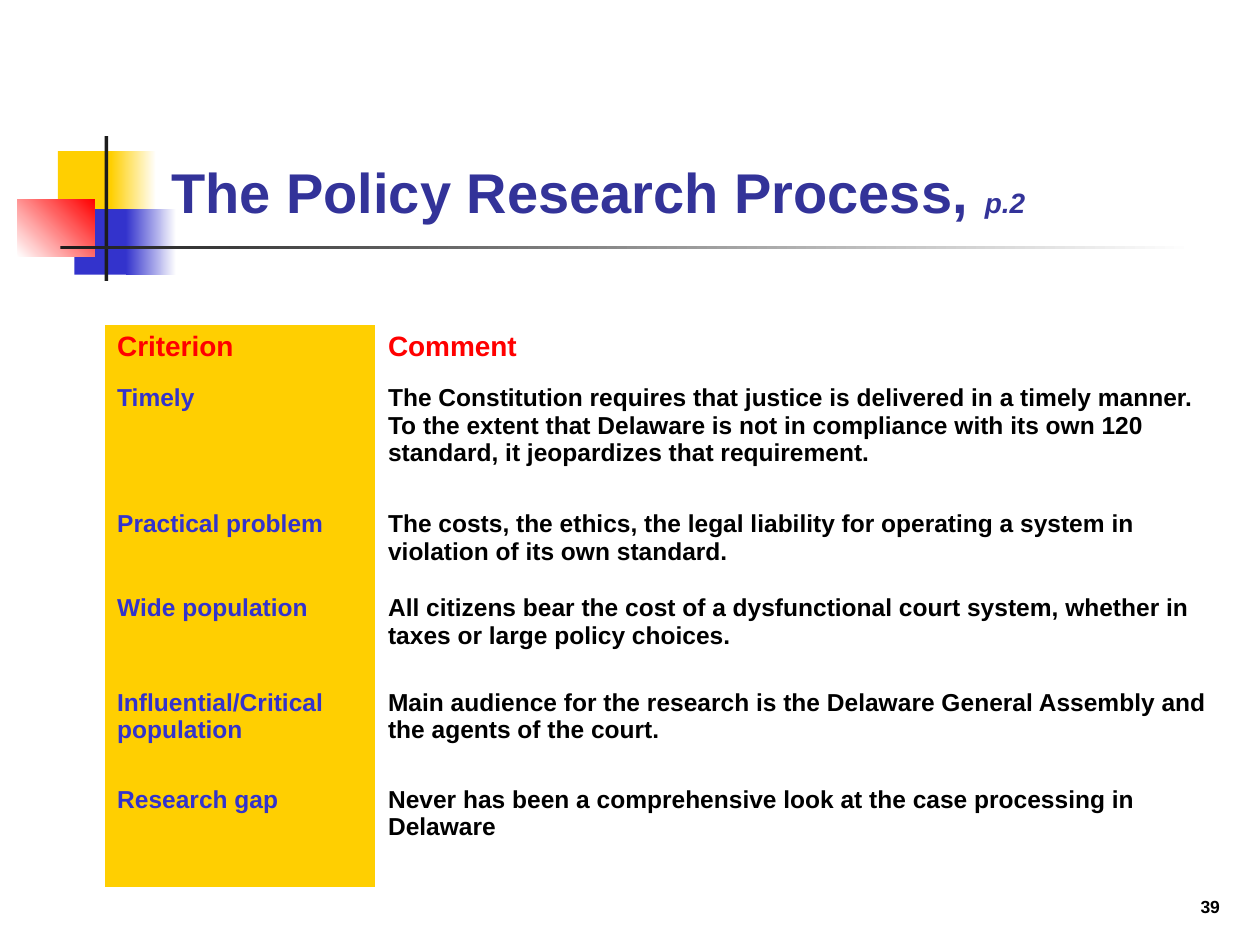
from dataclasses import dataclass
from typing import NamedTuple, Optional

from pptx import Presentation
from pptx.dml.color import RGBColor
from pptx.enum.shapes import MSO_SHAPE
from pptx.enum.text import MSO_ANCHOR, MSO_AUTO_SIZE, PP_ALIGN
from pptx.oxml.ns import qn
from pptx.util import Inches, Pt


@dataclass(frozen=True)
class Theme:
    font: str = "Arial"
    yellow: str = "FFCF01"
    blue: str = "3333CC"
    red: str = "FF0000"
    white: str = "FFFFFF"
    dark: str = "1C1C1C"
    black: str = "000000"
    title: str = "333399"
    title_size: int = 32
    header_size: int = 16
    body_size: int = 14
    number_size: int = 10


class Block(NamedTuple):
    left: float
    top: float
    width: float
    height: float
    color: str
    fade_to: Optional[str] = None
    angle: int = 0


class Row(NamedTuple):
    height: float
    criterion: str
    comment: str


THEME = Theme()
NO_GRID_STYLE = "{2D5ABB26-0587-4C30-8999-92F81FD0307C}"

BLOCKS = [
    Block(0.46, 1.2, 0.48, 0.52, THEME.yellow),
    Block(0.88, 1.2, 0.36, 0.52, THEME.yellow, THEME.white),
    Block(0.59, 1.66, 0.46, 0.52, THEME.blue),
    Block(1, 1.66, 0.4, 0.52, THEME.blue, THEME.white),
    Block(0.14, 1.58, 0.61, 0.46, THEME.white, THEME.red, 45),
    Block(0.83, 1.08, 0.03, 1.15, THEME.dark),
    Block(0.48, 1.95, 9, 0.03, THEME.dark, THEME.white),
]

COLUMN_WIDTHS = [2.15, 6.77]
ROWS = [
    Row(0.42, "Criterion", "Comment"),
    Row(1, "Timely",
        "The Constitution requires that justice is delivered in a timely manner.  "
        "To the extent that Delaware is not in compliance with its own 120 standard, "
        "it jeopardizes that requirement."),
    Row(0.67, "Practical problem",
        "The costs, the ethics, the legal liability for operating a system in "
        "violation of its own standard."),
    Row(0.75, "Wide population",
        "All citizens bear the cost of a dysfunctional court system, whether in "
        "taxes or large policy choices."),
    Row(0.77, "Influential/Critical population",
        "Main audience for the research is the Delaware General Assembly and "
        "the agents of the court."),
    Row(0.85, "Research gap",
        "Never has been a comprehensive look at the case processing in Delaware"),
]


def add_span(para, text: str, size: int, color: str, italic: bool = False) -> None:
    span = para.add_run()
    span.text = text
    span.font.name = THEME.font
    span.font.size = Pt(size)
    span.font.bold = True
    span.font.italic = italic
    span.font.color.rgb = RGBColor.from_string(color)


def draw_block(page, block: Block) -> None:
    shape = page.shapes.add_shape(
        MSO_SHAPE.RECTANGLE, Inches(block.left), Inches(block.top),
        Inches(block.width), Inches(block.height))
    shape.shadow.inherit = False
    shape.line.fill.background()
    if block.fade_to is None:
        shape.fill.solid()
        shape.fill.fore_color.rgb = RGBColor.from_string(block.color)
        return
    shape.fill.gradient()
    shape.fill.gradient_angle = block.angle
    for stop, color in zip(shape.fill.gradient_stops, (block.color, block.fade_to)):
        stop.color.rgb = RGBColor.from_string(color)


def draw_title(page) -> None:
    box = page.shapes.title
    box.left, box.top, box.width, box.height = map(Inches, (1.26, 0.23, 8.52, 1.6))
    box.text_frame.auto_size = MSO_AUTO_SIZE.NONE
    box.text_frame.vertical_anchor = MSO_ANCHOR.BOTTOM
    para = box.text_frame.paragraphs[0]
    para.alignment = PP_ALIGN.LEFT
    add_span(para, "The Policy Research Process, ", THEME.title_size, THEME.title)
    add_span(para, "p.2", THEME.header_size, THEME.title, italic=True)


def draw_page_number(page) -> None:
    box = page.shapes.add_textbox(Inches(7.7), Inches(6.83), Inches(2.08), Inches(0.5))
    box.text_frame.word_wrap = True
    box.text_frame.vertical_anchor = MSO_ANCHOR.BOTTOM
    para = box.text_frame.paragraphs[0]
    para.alignment = PP_ALIGN.RIGHT
    add_span(para, "39", THEME.number_size, THEME.black)


def draw_table(page) -> None:
    frame = page.shapes.add_table(
        len(ROWS), len(COLUMN_WIDTHS), Inches(0.83), Inches(2.58),
        Inches(sum(COLUMN_WIDTHS)), Inches(sum(row.height for row in ROWS)))
    table = frame.table
    table.first_row = table.horz_banding = False
    next(frame.element.iter(qn("a:tableStyleId"))).text = NO_GRID_STYLE
    for column, width in zip(table.columns, COLUMN_WIDTHS):
        column.width = Inches(width)

    for index, row in enumerate(ROWS):
        table.rows[index].height = Inches(row.height)
        is_header = index == 0
        size = THEME.header_size if is_header else THEME.body_size
        colors = (THEME.red, THEME.red) if is_header else (THEME.blue, THEME.black)
        for cell, text, color in zip(
                table.rows[index].cells, (row.criterion, row.comment), colors):
            add_span(cell.text_frame.paragraphs[0], text, size, color)
        criterion, comment = table.rows[index].cells
        criterion.fill.solid()
        criterion.fill.fore_color.rgb = RGBColor.from_string(THEME.yellow)
        comment.fill.background()


def main() -> None:
    deck = Presentation()
    deck.slide_width, deck.slide_height = Inches(10), Inches(7.5)
    title_only = deck.slide_layouts[5]
    page = deck.slides.add_slide(title_only)
    for block in BLOCKS:
        draw_block(page, block)
    draw_page_number(page)
    draw_title(page)
    draw_table(page)
    # The title text lies in front of the decorative blocks.
    tree = page.shapes.title.element.getparent()
    tree.insert(tree.index(frame_of_table(page)), page.shapes.title.element)
    deck.save("out.pptx")


def frame_of_table(page):
    return next(shape.element for shape in page.shapes if shape.has_table)


if __name__ == "__main__":
    main()
